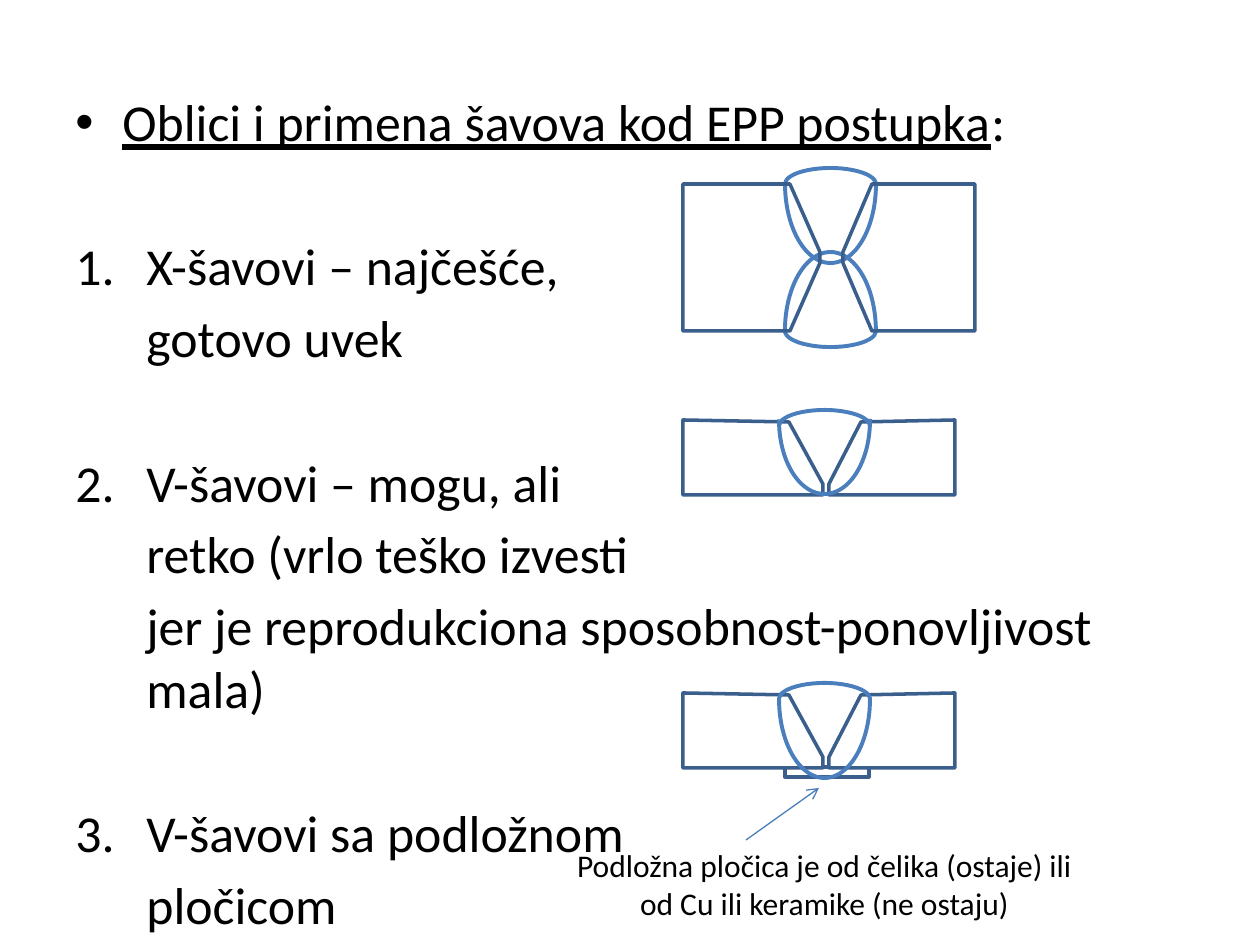
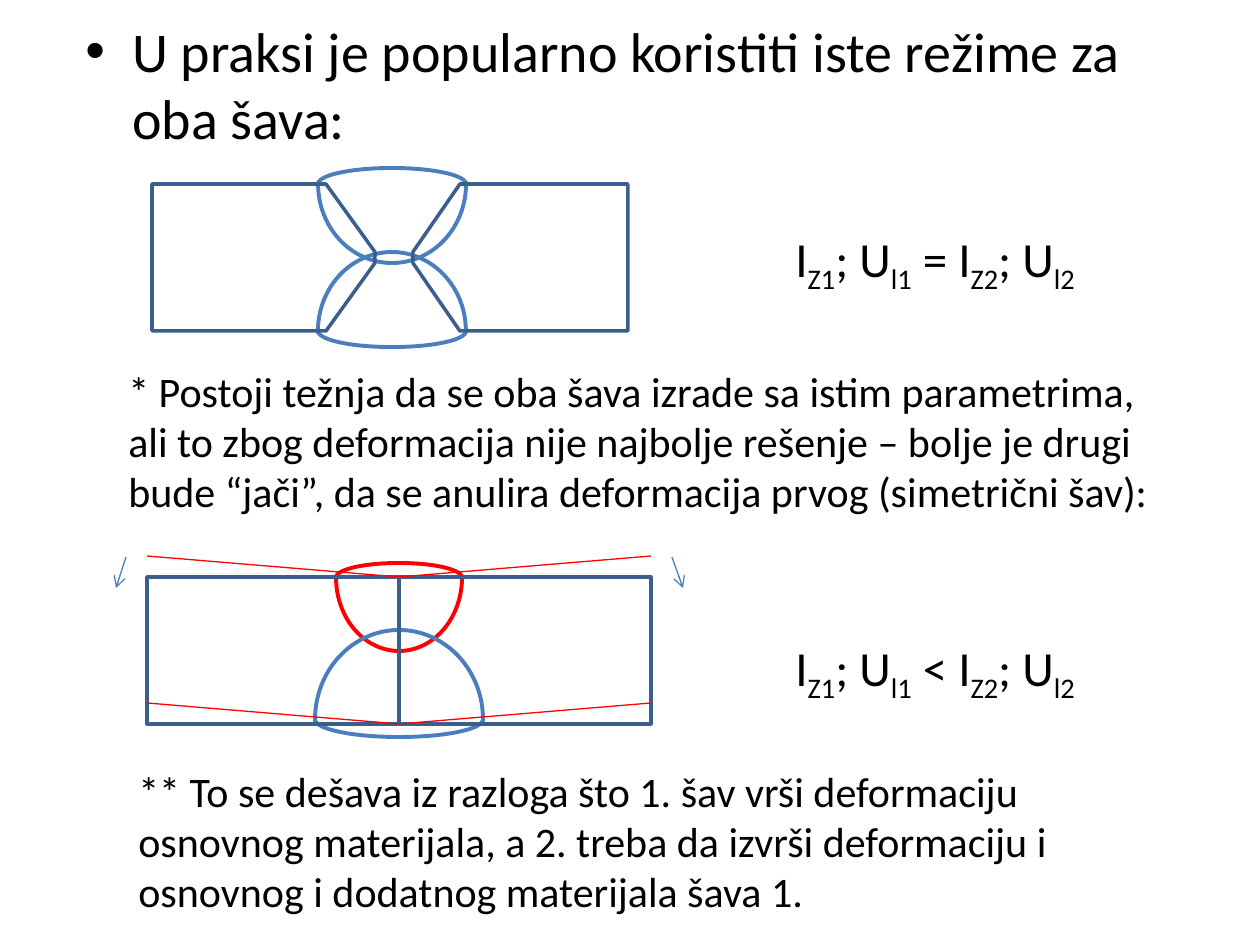
from lxml import etree
from pptx import Presentation
from pptx.dml.color import RGBColor
from pptx.enum.shapes import MSO_CONNECTOR, MSO_SHAPE
from pptx.enum.text import PP_ALIGN
from pptx.oxml.ns import qn
from pptx.util import Pt

PX = 7257
FONT = "Calibri"
COLORS = {"text": "000000", "plate": "3A5F8C", "weld": "4B7EBC", "first": "FF0000", "paper": "FFFFFF"}
ARC, RECTANGLE = MSO_SHAPE.ARC, MSO_SHAPE.RECTANGLE
STRAIGHT = MSO_CONNECTOR.STRAIGHT
LEFT, CENTER = PP_ALIGN.LEFT, PP_ALIGN.CENTER
CAP_ANGLES, BEAD_ANGLES = (108.22, 0), (106.74, 0.92)


def add_text(slide, box, lines, size, align=LEFT):
    shape = slide.shapes.add_textbox(*[value * PX for value in box])
    text_frame = shape.text_frame
    text_frame.word_wrap = True
    text_frame.text = "\n".join(lines)
    for paragraph in text_frame.paragraphs:
        paragraph.alignment = align
        paragraph.font.name = FONT
        paragraph.font.size = Pt(size)
        paragraph.font.color.rgb = RGBColor.from_string(COLORS["text"])
    return text_frame.paragraphs


def set_bullet(paragraph, margin, hanging, tag=None, **attributes):
    properties = paragraph._p.get_or_add_pPr()
    properties.set("marL", str(margin * PX))
    properties.set("indent", str(-hanging * PX))
    if tag:
        if tag == "a:buChar":
            etree.SubElement(properties, qn("a:buFont")).set("typeface", "Arial")
        bullet = etree.SubElement(properties, qn(tag))
        for name, value in attributes.items():
            bullet.set(name, value)
        default_run = properties.find(qn("a:defRPr"))
        if default_run is not None:
            properties.append(default_run)


presentation = Presentation()
presentation.slide_width = 1260 * PX
presentation.slide_height = 945 * PX
blank = presentation.slide_layouts[6]
shapes_slide = presentation.slides.add_slide(blank)
regimes_slide = presentation.slides.add_slide(blank)

drawings = []

for slide, left, stretch in [(shapes_slide, 683, 1), (regimes_slide, 152, 1.63)]:
    parts = []
    bead_left, bead_width = round(left + 102 * stretch), round(91 * stretch)
    for top, height, angles, turn in [
        (168, 32, CAP_ANGLES, 0),
        (105, 158, BEAD_ANGLES, 180),
        (315, 32, CAP_ANGLES, 180),
        (252, 158, BEAD_ANGLES, 0),
    ]:
        parts.append((ARC, (bead_left, top, bead_width, height), "weld", angles, turn))
    for outer, edge, root in [(0, 107, 137), (292, 189, 160)]:
        outer, edge, root = [round(left + x * stretch) for x in (outer, edge, root)]
        points = [(edge, 184), (outer, 184), (outer, 331), (edge, 331), (root, 263), (root, 252)]
        parts.append(("plate", points, None))
    drawings.append((slide, parts))

for top, bead_height, backing in [(410, 147, False), (683, 158, True)]:
    parts = []
    if backing:
        parts.append((RECTANGLE, (785, 767, 84, 10), "plate", (), 0))
    for outer, edge, root in [(683, 789, 823), (955, 861, 829)]:
        points = [(outer, top + 10), (outer, top + 85), (root, top + 85), (root, top + 74), (edge, top + 12)]
        parts.append(("plate", points, "paper"))
    parts.append((ARC, (779, top, 91, 32), "weld", CAP_ANGLES, 0))
    parts.append((ARC, (779, top - 63, 91, bead_height), "weld", BEAD_ANGLES, 180))
    drawings.append((shapes_slide, parts))

drawings.append((regimes_slide, [
    (ARC, (336, 563, 126, 29), "first", CAP_ANGLES, 0),
    (ARC, (336, 504, 126, 147), "first", BEAD_ANGLES, 180),
    (ARC, (315, 702, 168, 35), "weld", CAP_ANGLES, 180),
    (ARC, (315, 630, 168, 179), "weld", BEAD_ANGLES, 0),
    (RECTANGLE, (147, 577, 252, 147), "plate", (), 0),
    (RECTANGLE, (399, 577, 252, 147), "plate", (), 0),
]))

for slide, parts in drawings:
    group = slide.shapes.add_group_shape()
    for kind, geometry, *style in parts:
        if kind == "plate":
            color, fill = "plate", style[0]
            builder = group.shapes.build_freeform(*geometry[0], scale=PX)
            builder.add_line_segments(geometry[1:], close=True)
            shape = builder.convert_to_shape()
        else:
            color, angles, turn = style
            fill = None
            shape = group.shapes.add_shape(kind, *[value * PX for value in geometry])
            shape.rotation = turn
            for index, angle in enumerate(angles):
                shape.adjustments[index] = angle
        shape.shadow.inherit = False
        shape.line.color.rgb = RGBColor.from_string(COLORS[color])
        shape.line.width = Pt(2.25 if kind == ARC else 2)
        if fill:
            shape.fill.solid()
            shape.fill.fore_color.rgb = RGBColor.from_string(COLORS[fill])
        else:
            shape.fill.background()

connectors = [
    (shapes_slide, (746, 840, 819, 788), "weld", True),
    (regimes_slide, (126, 557, 116, 588), "weld", True),
    (regimes_slide, (672, 557, 683, 588), "weld", True),
]
for bottom in (577, 724):
    for end in (147, 651):
        connectors.append((regimes_slide, (399, bottom, end, bottom - 21), "first", False))

for slide, ends, color, arrow in connectors:
    connector = slide.shapes.add_connector(STRAIGHT, *[value * PX for value in ends])
    connector.line.color.rgb = RGBColor.from_string(COLORS[color])
    connector.line.width = Pt(0.75)
    if arrow:
        etree.SubElement(connector.line._get_or_add_ln(), qn("a:tailEnd")).set("type", "arrow")
    etree.SubElement(connector._element.spPr, qn("a:effectLst"))

seams = [
    ["X-šavovi – najčešće,", "gotovo uvek"],
    ["V-šavovi – mogu, ali", "retko (vrlo teško izvesti", "jer je reprodukciona sposobnost-ponovljivost mala)"],
    ["V-šavovi sa podložnom", "pločicom"],
]
heading = "Oblici i primena šavova kod EPP postupka"
lines = [heading] + [line for seam in seams for line in seam]
paragraphs = iter(add_text(shapes_slide, (63, 84, 1134, 760), lines, 29.6))
title = next(paragraphs)
set_bullet(title, 47, 47, "a:buChar", char="•")
title.runs[0].font.underline = True
colon = title.add_run()
colon.text = ":"
colon.font.underline = False
for number, seam in enumerate(seams, 1):
    for index in range(len(seam)):
        paragraph = next(paragraphs)
        if index == 0:
            paragraph.space_before = Pt(46.8)
            set_bullet(paragraph, 71, 71, "a:buAutoNum", type="arabicPeriod", startAt=str(number))
        else:
            paragraph.space_before = Pt(5.6)
            set_bullet(paragraph, 71, 0)

add_text(shapes_slide, (546, 840, 557, 89),
         ["Podložna pločica je od čelika (ostaje) ili od Cu ili keramike (ne ostaju)"], 18, CENTER)

opening = add_text(regimes_slide, (73, 10, 1134, 147),
                   ["U praksi je popularno koristiti iste režime za oba šava:"], 32)[0]
set_bullet(opening, 47, 47, "a:buChar", char="•")

notes = [
    (116, 359, "* Postoji težnja da se oba šava izrade sa istim parametrima, ali to zbog deformacija nije "
               "najbolje rešenje – bolje je drugi bude “jači”, da se anulira deformacija prvog (simetrični šav):"),
    (126, 759, "** To se dešava iz razloga što 1. šav vrši deformaciju osnovnog materijala, a 2. treba da "
               "izvrši deformaciju i osnovnog i dodatnog materijala šava 1."),
]
for left, top, note in notes:
    add_text(regimes_slide, (left, top, 1050, 165), [note], 24)

for top, sign in [(222, "="), (631, "<")]:
    paragraph = add_text(regimes_slide, (699, top, 472, 72), [""], 28, CENTER)[0]
    for base, subscript in [("I", "Z1"), ("; U", "l1"), (f" {sign} I", "Z2"), ("; U", "l2")]:
        paragraph.add_run().text = base
        run = paragraph.add_run()
        run.text = subscript
        run.font._element.set("baseline", "-25000")

presentation.save("out.pptx")
